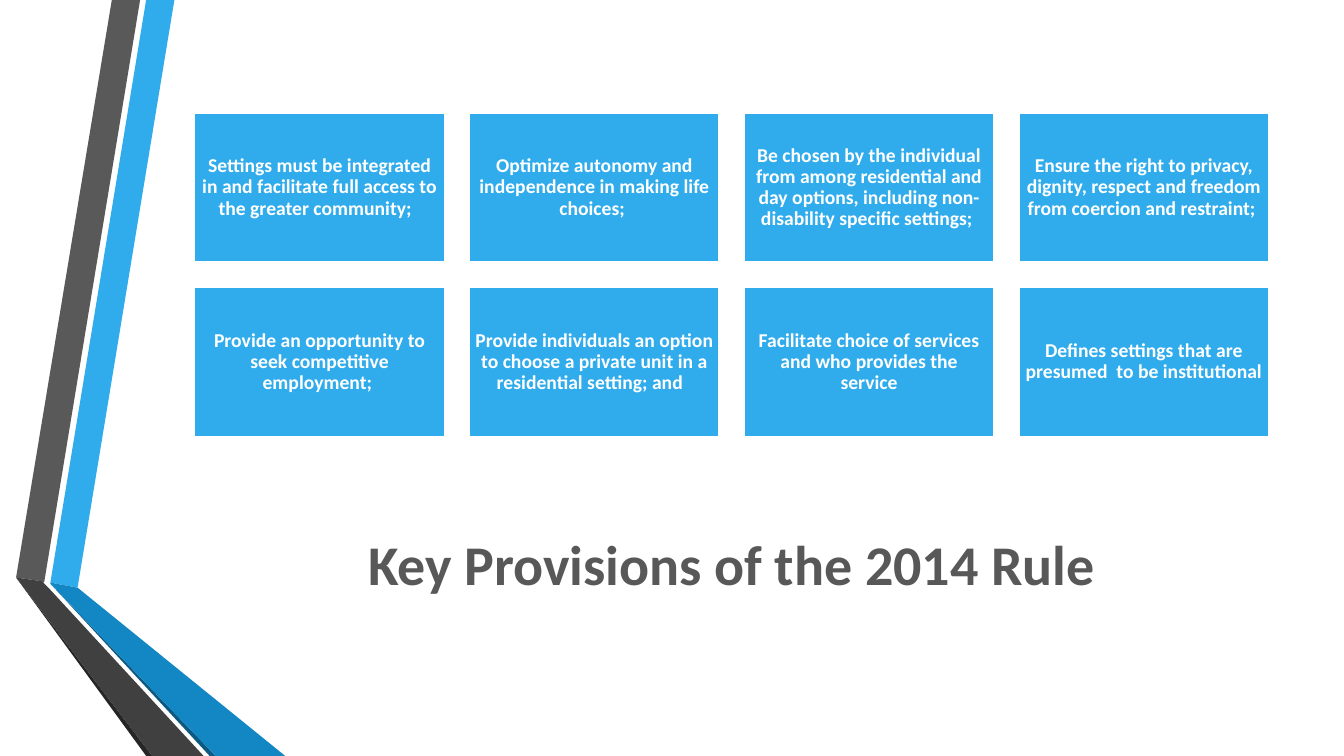
from dataclasses import dataclass
from typing import Any

from pptx import Presentation
from pptx.dml.color import RGBColor
from pptx.enum.shapes import MSO_SHAPE
from pptx.enum.text import MSO_ANCHOR, MSO_AUTO_SIZE, PP_ALIGN
from pptx.util import Inches, Pt

BLUE, WHITE, GREY = "30ACEC", "FFFFFF", "585858"
LEFT, TOP, WIDTH, HEIGHT = 1.93, 1.12, 2.48, 1.48
STEP_X, STEP_Y, COLUMNS = 2.725, 1.73, 4


@dataclass(frozen=True)
class Band:
    """A filled strip of the ribbon, with its corners in inches."""

    color: str
    points: tuple[tuple[float, float], ...]


@dataclass(frozen=True)
class Style:
    """The look of a text: size in points, colour, line spacing, inset."""

    size: float
    color: str
    spacing: float
    inset: float


BANDS = (
    Band(BLUE, ((0.5, 5.78), (0.77, 5.83), (1.73, 0), (1.45, 0))),
    Band("595959", ((1.39, 0), (1.11, 0), (0.16, 5.73), (0.44, 5.77))),
    Band("262626", ((0.16, 5.73), (1.45, 7.5), (1.51, 7.5))),
    Band("0C5A82", ((0.5, 5.79), (2.08, 7.5), (2.14, 7.5))),
    Band("1287C3", ((0.5, 5.79), (2.14, 7.5), (2.83, 7.5), (0.77, 5.83), (0.5, 5.78))),
    Band("404040", ((2.02, 7.5), (0.48, 5.83), (0.43, 5.78), (0.44, 5.77),
                    (0.16, 5.73), (1.51, 7.5))),
)
RULES = (
    "Settings must be integrated in and facilitate full access to the greater community;  ",
    "Optimize autonomy and independence in making life choices; ",
    "Be chosen by the individual from among residential and day options, "
    "including non-disability specific settings; ",
    "Ensure the right to privacy, dignity, respect and freedom from coercion and restraint; ",
    "Provide an opportunity to seek competitive employment; ",
    "Provide individuals an option to choose a private unit in a residential setting; and  ",
    "Facilitate choice of services and who provides the service",
    "Defines settings that are presumed  to be institutional",
)
HEAD = Style(40, GREY, 0.9, 0.1)
BODY = Style(14, WHITE, 0.9, 0.06)


def paint(target: Any, color: str) -> None:
    """Give a fill a solid colour."""
    target.solid()
    target.fore_color.rgb = RGBColor.from_string(color)


def assign(target: Any, values: dict[str, Any]) -> None:
    """Set each named attribute on the target."""
    for name, value in values.items():
        setattr(target, name, value)


def write(shape: Any, text: str, style: Style) -> None:
    """Put centred bold text in a shape."""
    frame = shape.text_frame
    frame.text = text
    sides = ("left", "top", "right", "bottom")
    assign(frame, {f"margin_{side}": Inches(style.inset) for side in sides})
    assign(frame, {"word_wrap": True, "auto_size": MSO_AUTO_SIZE.NONE,
                   "vertical_anchor": MSO_ANCHOR.MIDDLE})
    line = frame.paragraphs[0]
    assign(line, {"alignment": PP_ALIGN.CENTER, "line_spacing": style.spacing})
    font = line.runs[0].font
    assign(font, {"name": "Calibri", "size": Pt(style.size), "bold": True})
    paint(font.fill, style.color)


def draw_band(slide: Any, band: Band) -> None:
    """Draw one strip of the ribbon."""
    first, *rest = [(Inches(x), Inches(y)) for x, y in band.points]
    pen = slide.shapes.build_freeform(*first)
    pen.add_line_segments(rest, close=True)
    shape = pen.convert_to_shape()
    shape.shadow.inherit = False
    paint(shape.fill, band.color)
    shape.line.fill.background()


def draw_rule(slide: Any, index: int, text: str) -> None:
    """Draw one provision in its place in the grid."""
    row, column = divmod(index, COLUMNS)
    box = slide.shapes.add_shape(
        MSO_SHAPE.RECTANGLE, Inches(LEFT + column * STEP_X),
        Inches(TOP + row * STEP_Y), Inches(WIDTH), Inches(HEIGHT))
    box.shadow.inherit = False
    paint(box.fill, BLUE)
    paint(box.line.fill, WHITE)
    box.line.width = Pt(1.25)
    write(box, text, BODY)


def main() -> None:
    """Build the slide and save it."""
    deck = Presentation()
    assign(deck, {"slide_width": Inches(13.33), "slide_height": Inches(7.5)})
    slide = deck.slides.add_slide(deck.slide_layouts[5])
    paint(slide.background.fill, WHITE)
    for band in BANDS:
        draw_band(slide, band)
    title = slide.shapes.title
    assign(title, {"left": Inches(LEFT), "top": Inches(4.87),
                   "width": Inches(10.65), "height": Inches(1.51)})
    write(title, "Key Provisions of the 2014 Rule", HEAD)
    for index, text in enumerate(RULES):
        draw_rule(slide, index, text)
    deck.save("out.pptx")


if __name__ == "__main__":
    main()
